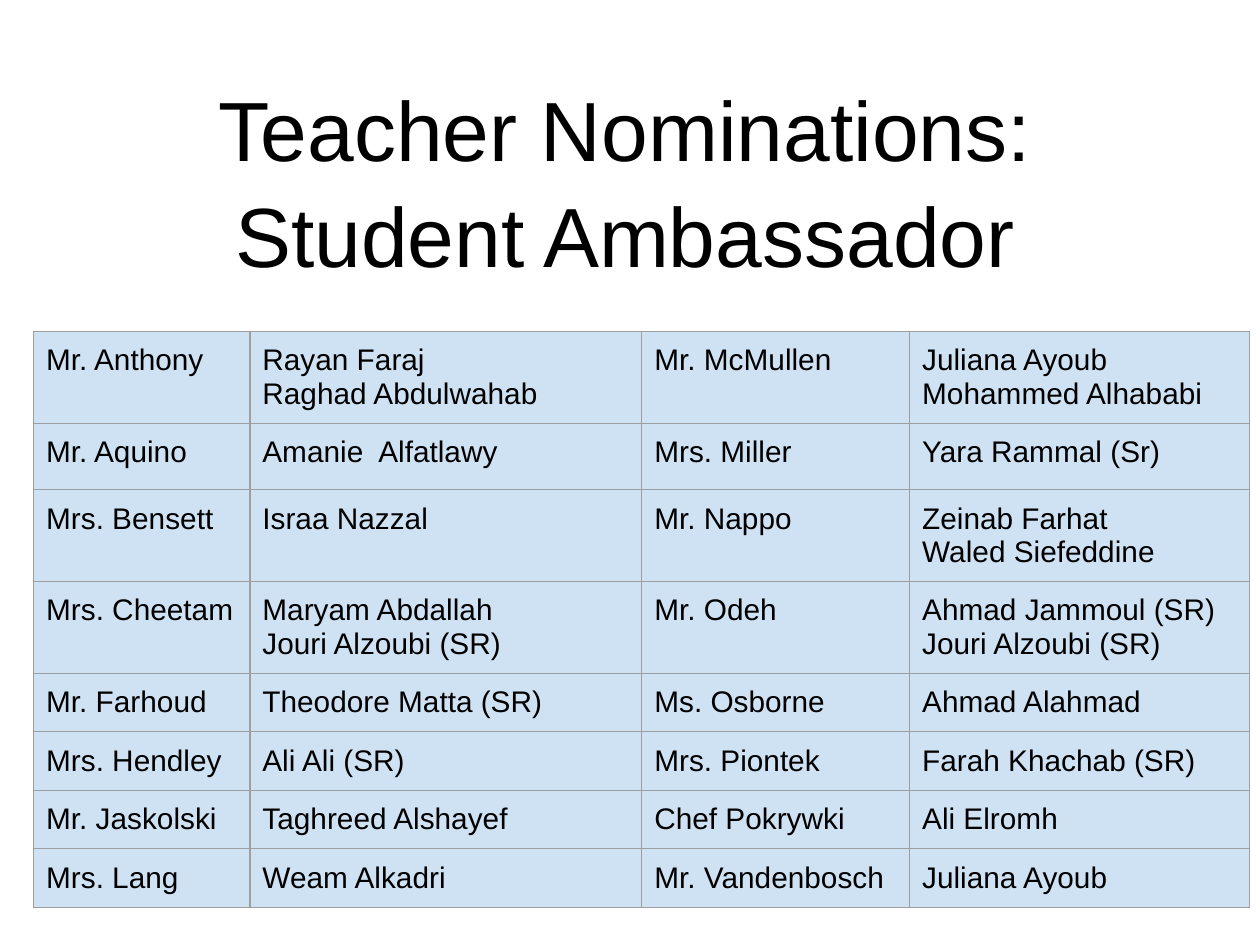
from lxml import etree
from pptx import Presentation
from pptx.dml.color import RGBColor
from pptx.enum.text import MSO_ANCHOR, MSO_AUTO_SIZE, PP_ALIGN
from pptx.oxml.ns import qn
from pptx.util import Cm, Pt

TOP = MSO_ANCHOR.TOP
FIXED = MSO_AUTO_SIZE.NONE
CENTER = PP_ALIGN.CENTER

BLACK = RGBColor(0x00, 0x00, 0x00)
BLUE = RGBColor(0xCF, 0xE2, 0xF3)
GREY = RGBColor(0x9E, 0x9E, 0x9E)

WIDTHS = [4.36, 7.9, 5.4, 6.85]
HEIGHTS = [1.85, 1.34, 1.85, 1.85] + [1.18] * 4
ROWS = [
    ("Mr. Anthony", "Rayan Faraj\nRaghad Abdulwahab",
     "Mr. McMullen", "Juliana Ayoub\nMohammed Alhababi"),
    ("Mr. Aquino", "Amanie  Alfatlawy", "Mrs. Miller", "Yara Rammal (Sr)"),
    ("Mrs. Bensett", "Israa Nazzal",
     "Mr. Nappo", "Zeinab Farhat\nWaled Siefeddine"),
    ("Mrs. Cheetam", "Maryam Abdallah\nJouri Alzoubi (SR)",
     "Mr. Odeh", "Ahmad Jammoul (SR)\nJouri Alzoubi (SR)"),
    ("Mr. Farhoud", "Theodore Matta (SR)", "Ms. Osborne", "Ahmad Alahmad"),
    ("Mrs. Hendley", "Ali Ali (SR)", "Mrs. Piontek", "Farah Khachab (SR)"),
    ("Mr. Jaskolski", "Taghreed Alshayef", "Chef Pokrywki", "Ali Elromh"),
    ("Mrs. Lang", "Weam Alkadri", "Mr. Vandenbosch", "Juliana Ayoub"),
]


def style(frame, size):
    for para in frame.paragraphs:
        for run in para.runs:
            run.font.name = "Arial"
            run.font.size = Pt(size)
            run.font.color.rgb = BLACK


def border(cell):
    props = cell._tc.get_or_add_tcPr()
    for spot, side in enumerate(("lnL", "lnR", "lnT", "lnB")):
        line = etree.Element(qn(f"a:{side}"), w=str(Pt(0.75)))
        fill = etree.SubElement(line, qn("a:solidFill"))
        etree.SubElement(fill, qn("a:srgbClr"), val=str(GREY))
        props.insert(spot, line)


prs = Presentation()
prs.slide_width = Cm(25.4)
prs.slide_height = Cm(19.05)
slide = prs.slides.add_slide(prs.slide_layouts[5])

# Title
title = slide.shapes.title
place = {"left": Cm(0), "top": Cm(1.27), "width": Cm(25.2), "height": Cm(6.5)}
for name, value in place.items():
    setattr(title, name, value)
frame = title.text_frame
frame.text = "Teacher Nominations:\nStudent Ambassador"
layout = {"word_wrap": True, "auto_size": FIXED, "vertical_anchor": TOP,
          "margin_top": Cm(0.2)}
for name, value in layout.items():
    setattr(frame, name, value)
for para in frame.paragraphs:
    para.alignment = CENTER
    para.line_spacing = 1.05
style(frame, 48)

# Table of teachers and nominees
table = slide.shapes.add_table(
    len(ROWS), len(WIDTHS), Cm(0.68), Cm(6.68),
    Cm(sum(WIDTHS)), Cm(sum(HEIGHTS))).table
table.first_row = False
table.horz_banding = False
for col, width in zip(table.columns, WIDTHS):
    col.width = Cm(width)
for row, height, texts in zip(table.rows, HEIGHTS, ROWS):
    row.height = Cm(height)
    for cell, text in zip(row.cells, texts):
        cell.text = text
        for side in ("left", "right", "top", "bottom"):
            setattr(cell, f"margin_{side}", Cm(0.25))
        cell.fill.solid()
        cell.fill.fore_color.rgb = BLUE
        border(cell)
        style(cell.text_frame, 17)

prs.save("out.pptx")
